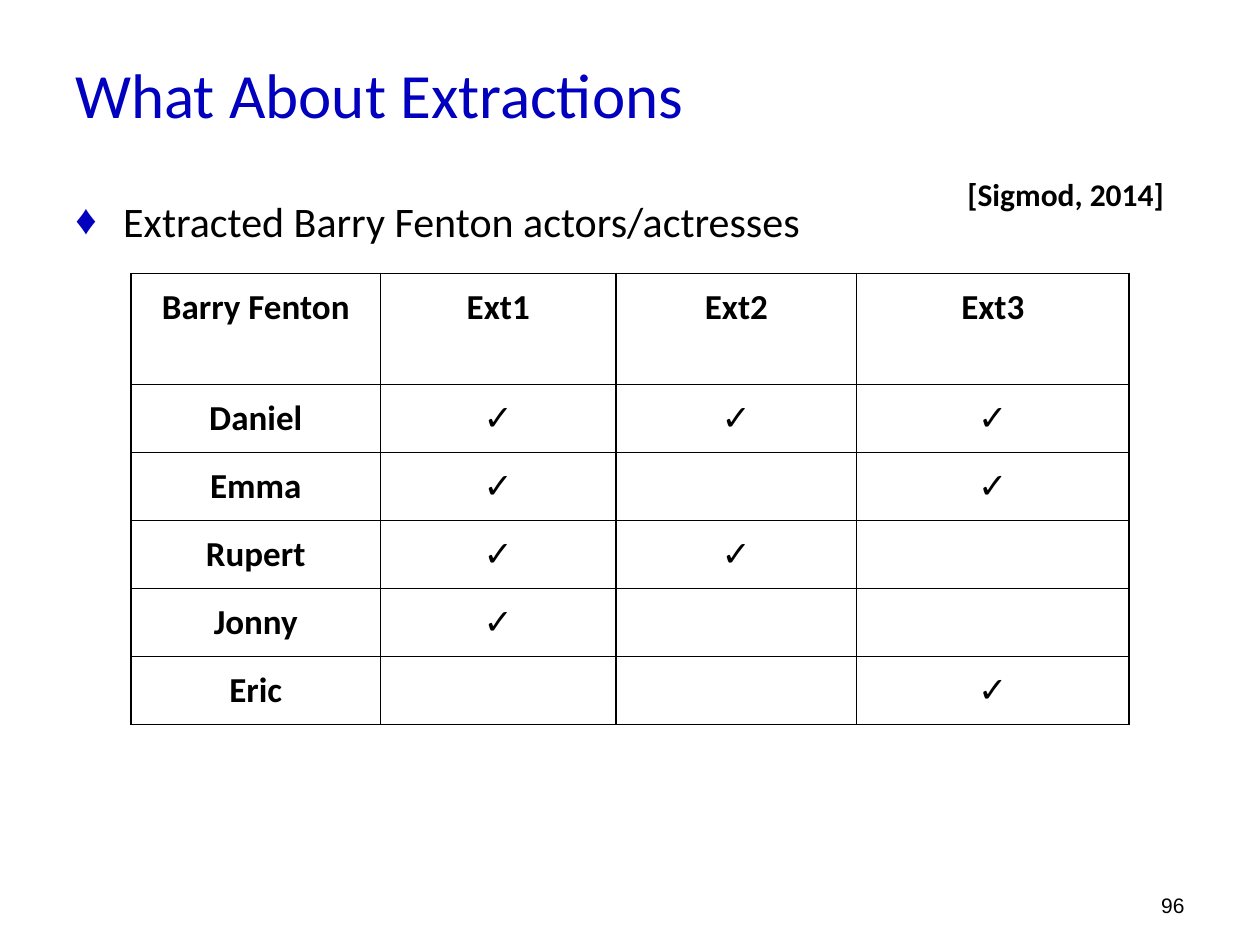
from lxml import etree
from pptx import Presentation
from pptx.dml.color import RGBColor
from pptx.enum.text import MSO_ANCHOR, PP_ALIGN
from pptx.oxml.ns import qn
from pptx.util import Inches, Pt

TOP, MIDDLE, BOTTOM = MSO_ANCHOR.TOP, MSO_ANCHOR.MIDDLE, MSO_ANCHOR.BOTTOM
LEFT, CENTER, RIGHT = PP_ALIGN.LEFT, PP_ALIGN.CENTER, PP_ALIGN.RIGHT
BLUE = RGBColor(0x00, 0x00, 0xBE)
BLACK = RGBColor(0x00, 0x00, 0x00)

FILM = "Barry Fenton"
COLUMN_WIDTHS = [1.98, 1.87, 1.91, 2.16]
HEADER_HEIGHT, ROW_HEIGHT = 0.88, 0.54
EXTRACTIONS = [
    [FILM, "Ext1", "Ext2", "Ext3"],
    ["Daniel", "✓", "✓", "✓"],
    ["Emma", "✓", "", "✓"],
    ["Rupert", "✓", "✓", ""],
    ["Jonny", "✓", "", ""],
    ["Eric", "", "", "✓"],
]


def style_paragraph(para, size, color=BLACK, bold=False, align=LEFT, font="Calibri"):
    para.alignment = align
    para.font.name = font
    para.font.size = Pt(size)
    para.font.bold = bold
    para.font.color.rgb = color


def add_text(page, text, left, top, width, height, size, anchor=TOP, **style):
    box = page.shapes.add_textbox(Inches(left), Inches(top), Inches(width), Inches(height))
    frame = box.text_frame
    frame.word_wrap = True
    frame.vertical_anchor = anchor
    para = frame.paragraphs[0]
    para.text = text
    style_paragraph(para, size, **style)
    return para


def add_bullet(para, symbol, color, indent):
    para.space_before = Pt(4.8)
    properties = para._p.get_or_add_pPr()
    properties.set("marL", str(Inches(indent)))
    properties.set("indent", str(-Inches(indent)))
    bullet_color = etree.Element(qn("a:buClr"))
    etree.SubElement(bullet_color, qn("a:srgbClr"), val=str(color))
    bullet_font = etree.Element(qn("a:buFont"), typeface="Arial")
    bullet = etree.Element(qn("a:buChar"), char=symbol)
    spacing = properties.find(qn("a:spcBef"))
    spacing.addnext(bullet_color)
    bullet_color.addnext(bullet_font)
    bullet_font.addnext(bullet)


def add_borders(cell, color, width):
    properties = cell._tc.get_or_add_tcPr()
    for position, side in enumerate(("lnL", "lnR", "lnT", "lnB")):
        line = etree.Element(qn(f"a:{side}"), w=str(Pt(width)))
        fill = etree.SubElement(line, qn("a:solidFill"))
        etree.SubElement(fill, qn("a:srgbClr"), val=str(color))
        properties.insert(position, line)


def fill_cell(cell, text):
    cell.fill.background()
    cell.margin_left = cell.margin_right = Inches(0.1)
    cell.margin_top = cell.margin_bottom = Inches(0.1)
    para = cell.text_frame.paragraphs[0]
    para.text = text
    style_paragraph(para, 20, bold=True, align=CENTER)
    add_borders(cell, BLACK, 1)


def add_extraction_table(page, left, top):
    heights = [HEADER_HEIGHT] + [ROW_HEIGHT] * (len(EXTRACTIONS) - 1)
    table = page.shapes.add_table(
        len(heights), len(COLUMN_WIDTHS), Inches(left), Inches(top),
        Inches(sum(COLUMN_WIDTHS)), Inches(sum(heights)),
    ).table
    table.first_row = False
    table.horz_banding = False
    for column, width in zip(table.columns, COLUMN_WIDTHS):
        column.width = Inches(width)
    for row, height, texts in zip(table.rows, heights, EXTRACTIONS):
        row.height = Inches(height)
        for cell, text in zip(row.cells, texts):
            fill_cell(cell, text)


def main():
    deck = Presentation()
    deck.slide_width, deck.slide_height = Inches(10), Inches(7.5)
    page = deck.slides.add_slide(deck.slide_layouts[6])

    add_text(page, "What About Extractions", 0.5, 0.31, 9, 0.86, 36, MIDDLE, color=BLUE)
    topic = add_text(page, f"Extracted {FILM} actors/actresses", 0.5, 1.5, 9.5, 4.92, 24)
    add_bullet(topic, "♦", BLUE, 0.38)
    add_text(page, "96", 7.17, 6.83, 2.33, 0.5, 12, BOTTOM, align=RIGHT, font="Arial")
    add_text(page, "[Sigmod, 2014]", 7.58, 1.17, 2.3, 0.74, 18, MIDDLE, bold=True)
    add_extraction_table(page, 1.04, 2.17)

    deck.save("out.pptx")


if __name__ == "__main__":
    main()
